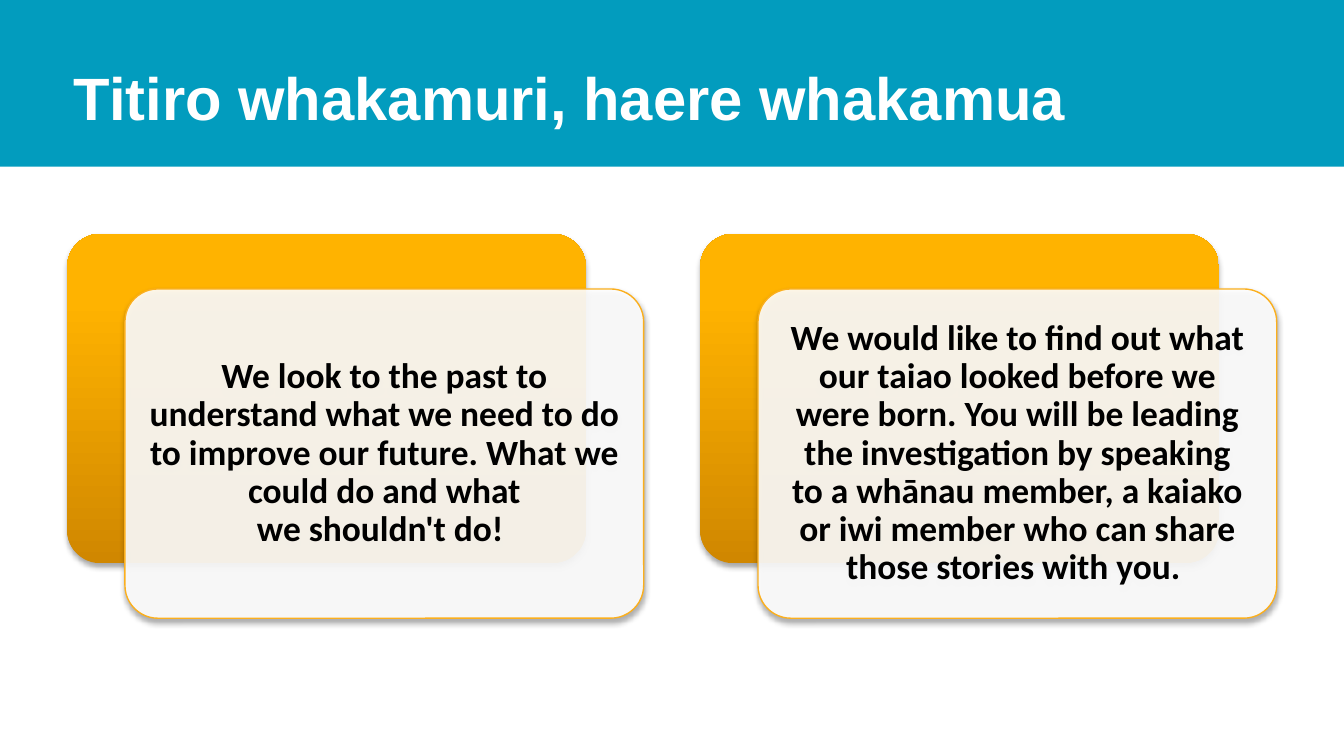
from dataclasses import dataclass

from lxml.etree import SubElement
from pptx import Presentation
from pptx.dml.color import RGBColor
from pptx.enum.shapes import MSO_SHAPE as Shape
from pptx.enum.text import MSO_ANCHOR as Anchor, PP_ALIGN as Align
from pptx.oxml import parse_xml
from pptx.oxml.ns import nsdecls, qn
from pptx.util import Inches, Pt


@dataclass(frozen=True)
class Theme:
    band: str = "029CBE"
    white: str = "FFFFFF"
    black: str = "000000"
    outline: str = "FBAF1D"
    gradient: tuple = ((0, "D08700"), (80, "FFB300"), (100, "FFB500"))
    title_font: str = "Arial"
    body_font: str = "Calibri"
    title_size: int = 32
    body_size: int = 19


@dataclass(frozen=True)
class Card:
    left: float
    text: str


THEME = Theme()
CARD_TOP, CARD_WIDTH, CARD_HEIGHT = 1.74, 3.86, 2.45
OFFSET_X, OFFSET_Y = 0.43, 0.41
FIRST_LEFT, CARD_PITCH = 0.5, 4.71

# A tilde marks a non-breaking space, as in TeX
NO_BREAK_SPACE = chr(160)
TITLE = "Titiro~whakamuri,~haere~whakamua"
CARD_TEXTS = (
    "We look to the past to understand what we need to do to improve our "
    "future. What we could do and what we~shouldn't~do!~",
    "We would~like to find out what our~taiao~looked before we were born.~"
    "You will~be leading the~investigation~by speaking to~a whānau member, "
    "a kaiako or iwi member who can share those stories with~you.~",
)


def write_text(shape, text: str, font_name: str, size: int, color: str,
               align, line_spacing: float, margins: tuple) -> None:
    frame = shape.text_frame
    frame.text = text.replace("~", NO_BREAK_SPACE)
    frame.word_wrap = True
    frame.vertical_anchor = Anchor.MIDDLE
    frame.margin_left = frame.margin_right = Inches(margins[0])
    frame.margin_top = frame.margin_bottom = Inches(margins[1])
    paragraph = frame.paragraphs[0]
    paragraph.alignment = align
    paragraph.line_spacing = line_spacing
    font = paragraph.runs[0].font
    font.name, font.size, font.bold = font_name, Pt(size), True
    font.color.rgb = RGBColor.from_string(color)


def add_panel(slide, left: float, top: float):
    """Add a rounded panel with a soft shadow below it."""
    shape = slide.shapes.add_shape(
        Shape.ROUNDED_RECTANGLE, Inches(left), Inches(top),
        Inches(CARD_WIDTH), Inches(CARD_HEIGHT))
    shape.adjustments[0] = 0.1
    shape.shadow.inherit = False
    effects = shape.element.spPr.find(qn("a:effectLst"))
    shadow = SubElement(effects, qn("a:outerShdw"), blurRad=str(Pt(3.1)),
                        dist=str(Pt(1.8)), dir="5400000", rotWithShape="0")
    color = SubElement(shadow, qn("a:srgbClr"), val=THEME.black)
    SubElement(color, qn("a:alpha"), val="35000")
    return shape


def fill_gradient(shape) -> None:
    """Shade the panel from dark at the bottom to light at the top."""
    stops = "".join(
        f'<a:gs pos="{position * 1000}"><a:srgbClr val="{color}"/></a:gs>'
        for position, color in THEME.gradient)
    gradient = parse_xml(
        f'<a:gradFill {nsdecls("a")} rotWithShape="1"><a:gsLst>{stops}</a:gsLst>'
        '<a:lin ang="16200000" scaled="0"/></a:gradFill>')
    shape.element.spPr.find(qn("a:prstGeom")).addnext(gradient)


def add_card(slide, card: Card) -> None:
    back = add_panel(slide, card.left, CARD_TOP)
    fill_gradient(back)
    back.line.fill.background()

    front = add_panel(slide, card.left + OFFSET_X, CARD_TOP + OFFSET_Y)
    front.fill.solid()
    front.fill.fore_color.rgb = RGBColor.from_string(THEME.white)
    color = front.element.spPr.find(qn("a:solidFill")).find(qn("a:srgbClr"))
    SubElement(color, qn("a:alpha"), val="90000")
    front.line.color.rgb = RGBColor.from_string(THEME.outline)
    front.line.width = Pt(0.75)
    write_text(front, card.text, THEME.body_font, THEME.body_size,
               THEME.black, Align.CENTER, 0.9, (0.08, 0.08))


def add_header(slide, width) -> None:
    band = slide.shapes.add_shape(Shape.RECTANGLE, 0, 0, width, Inches(1.24))
    band.shadow.inherit = False
    band.fill.solid()
    band.fill.fore_color.rgb = RGBColor.from_string(THEME.band)
    band.line.fill.background()
    title = slide.shapes.add_textbox(
        Inches(0.45), Inches(0.01), Inches(9.05), Inches(1.15))
    write_text(title, TITLE, THEME.title_font, THEME.title_size,
               THEME.white, Align.LEFT, 1.5, (0.1, 0.05))


def main() -> None:
    # Widescreen slide, 16 to 9
    presentation = Presentation()
    presentation.slide_width = Inches(10)
    presentation.slide_height = Inches(10) * 9 // 16
    slide = presentation.slides.add_slide(presentation.slide_layouts[6])

    # Title band
    add_header(slide, presentation.slide_width)

    # Two layered cards side by side
    for index, text in enumerate(CARD_TEXTS):
        add_card(slide, Card(FIRST_LEFT + index * CARD_PITCH, text))

    presentation.save("out.pptx")


if __name__ == "__main__":
    main()
